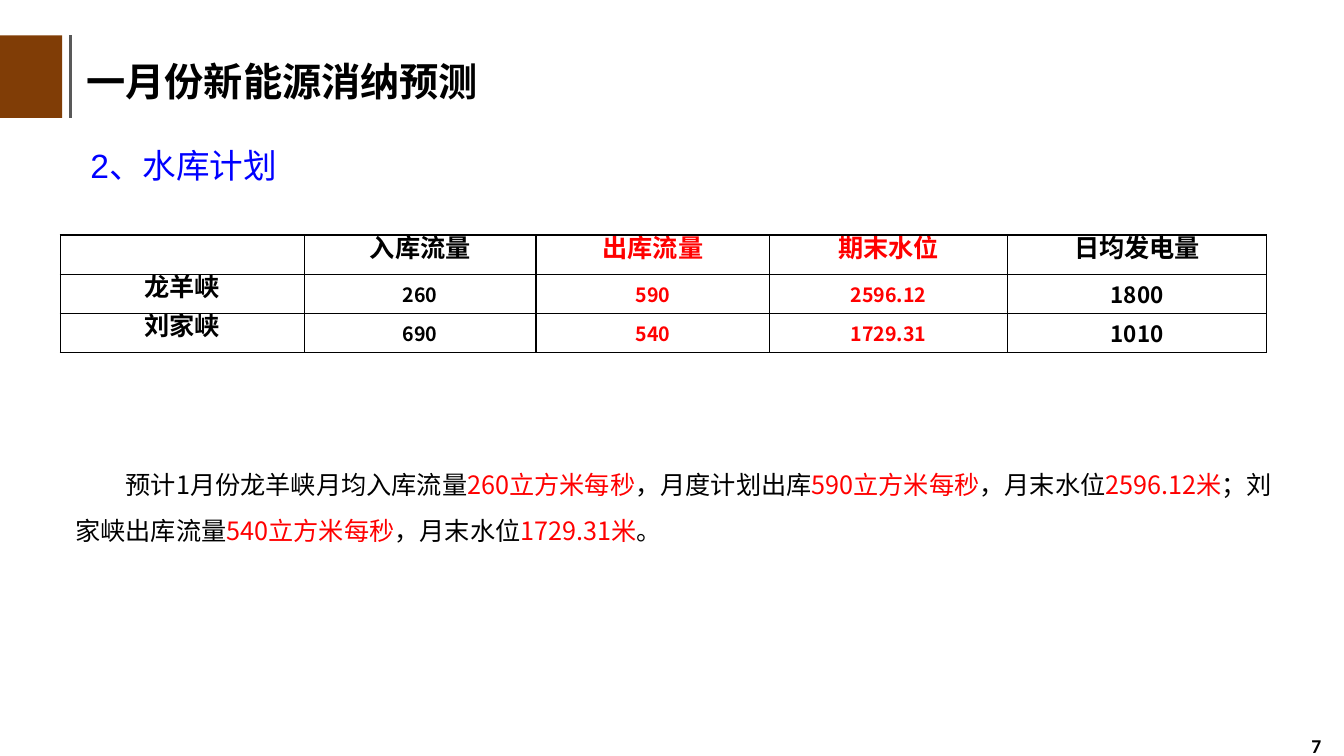
from typing import NamedTuple

import lxml.etree
import pptx
import pptx.dml.color
import pptx.enum.shapes
import pptx.enum.text
import pptx.oxml.ns
import pptx.util

Cm = pptx.util.Cm
Pt = pptx.util.Pt
Align = pptx.enum.text.PP_ALIGN
Anchor = pptx.enum.text.MSO_ANCHOR
qn = pptx.oxml.ns.qn

HAN_FONT = "Noto Sans CJK SC"
BLACK, RED, BLUE = "000000", "FF0000", "0000FF"
BROWN, GREY = "803D06", "595959"


class Style(NamedTuple):
    size: float
    bold: bool = False
    font: str = HAN_FONT


class Span(NamedTuple):
    text: str
    color: str = BLACK


class TextBlock(NamedTuple):
    left: float
    top: float
    width: float
    height: float
    spans: list[Span]
    style: Style
    paragraph: dict = {}
    anchor: Anchor = Anchor.TOP
    indent: float = 0


class CellLook(NamedTuple):
    style: Style
    line_spacing: pptx.util.Length | None
    side_margin: float
    end_margin: float


def rgb(color: str) -> pptx.dml.color.RGBColor:
    return pptx.dml.color.RGBColor.from_string(color)


def apply(target, values: dict) -> None:
    for name, value in values.items():
        setattr(target, name, value)


def add_span(paragraph, span: Span, style: Style) -> None:
    run = paragraph.add_run()
    run.text = span.text
    apply(run.font, {"size": Pt(style.size), "bold": style.bold, "name": style.font})
    run.font.color.rgb = rgb(span.color)
    east_asian = lxml.etree.Element(qn("a:ea"), typeface=HAN_FONT)
    run.font._element.find(qn("a:latin")).addnext(east_asian)


def add_text(slide, block: TextBlock) -> None:
    box = slide.shapes.add_textbox(*map(Cm, block[:4]))
    apply(box.text_frame, {"word_wrap": True, "vertical_anchor": block.anchor})
    paragraph = box.text_frame.paragraphs[0]
    apply(paragraph, block.paragraph)
    if block.indent:
        paragraph._p.get_or_add_pPr().set("indent", str(Cm(block.indent)))
    for span in block.spans:
        add_span(paragraph, span, block.style)


def add_borders(cell) -> None:
    properties = cell._tc.get_or_add_tcPr()
    for side in ("lnL", "lnR", "lnT", "lnB"):
        border = lxml.etree.SubElement(properties, qn(f"a:{side}"), w=str(Pt(1)))
        fill = lxml.etree.SubElement(border, qn("a:solidFill"))
        lxml.etree.SubElement(fill, qn("a:srgbClr"), val=BLACK)


def fill_cell(cell, span: Span, look: CellLook) -> None:
    add_borders(cell)
    cell.fill.background()
    side, end = Cm(look.side_margin), Cm(look.end_margin)
    apply(cell, {"vertical_anchor": Anchor.MIDDLE, "margin_left": side,
                 "margin_right": side, "margin_top": end, "margin_bottom": end})
    paragraph = cell.text_frame.paragraphs[0]
    apply(paragraph, {"alignment": Align.CENTER, "line_spacing": look.line_spacing})
    if span.text:
        add_span(paragraph, span, look.style)


# Reservoir table
LABEL = CellLook(Style(18, True), Pt(14), 0.13, 0)
VALUE = CellLook(Style(14, True), Pt(20), 0.08, 0.08)
OUTPUT = CellLook(Style(16, True), None, 0.08, 0.08)

RESERVOIR_ROWS = [
    ["", "入库流量", "出库流量", "期末水位", "日均发电量"],
    ["龙羊峡", "260", "590", "2596.12", "1800"],
    ["刘家峡", "690", "540", "1729.31", "1010"],
]
COLUMN_WIDTHS = [6.15, 5.84, 5.89, 5.99, 6.53]
ROW_HEIGHT = 0.99
PLANNED_COLUMNS = (2, 3)


def add_reservoir_table(slide) -> None:
    rows, columns = len(RESERVOIR_ROWS), len(COLUMN_WIDTHS)
    reservoirs = slide.shapes.add_table(
        rows, columns, Cm(1.52), Cm(5.92),
        Cm(sum(COLUMN_WIDTHS)), Cm(rows * ROW_HEIGHT)).table
    apply(reservoirs, {"first_row": False, "horz_banding": False})
    for column, width in zip(reservoirs.columns, COLUMN_WIDTHS):
        column.width = Cm(width)
    for r, texts in enumerate(RESERVOIR_ROWS):
        reservoirs.rows[r].height = Cm(ROW_HEIGHT)
        for c, text in enumerate(texts):
            if r == 0 or c == 0:
                look = LABEL
            else:
                look = OUTPUT if c == columns - 1 else VALUE
            color = RED if c in PLANNED_COLUMNS else BLACK
            fill_cell(reservoirs.cell(r, c), Span(text, color), look)


# Text blocks
TEXT_BLOCKS = [
    TextBlock(1.93, 1.32, 22.38, 1.45, [Span("一月份新能源消纳预测")], Style(28, True)),
    TextBlock(1.65, 11.33, 31.22, 2.57, [
        Span("预计1月份龙羊峡月均入库流量"), Span("260立方米每秒", RED),
        Span("，月度计划出库"), Span("590立方米每秒", RED),
        Span("，月末水位"), Span("2596.12米", RED),
        Span("；刘家峡出库流量"), Span("540立方米每秒", RED),
        Span("，月末水位"), Span("1729.31米", RED), Span("。"),
    ], Style(18), {"line_spacing": 1.5}, indent=1.27),
    TextBlock(2.03, 3.53, 10.31, 1.3, [Span("2、水库计划", BLUE)],
              Style(24, font="Arial")),
    TextBlock(25.65, 18.29, 7.9, 1.02, [Span("7")], Style(14, True, "Calibri"),
              {"alignment": Align.RIGHT}, Anchor.MIDDLE),
]


def add_title_mark(slide) -> None:
    top, height, rule_x = Cm(0.89), Cm(2.08), Cm(1.78)
    block = slide.shapes.add_shape(
        pptx.enum.shapes.MSO_SHAPE.RECTANGLE, 0, top, Cm(1.57), height)
    block.shadow.inherit = False
    block.fill.solid()
    block.fill.fore_color.rgb = rgb(BROWN)
    block.line.fill.background()
    rule = slide.shapes.add_connector(
        pptx.enum.shapes.MSO_CONNECTOR.STRAIGHT, rule_x, top, rule_x, top + height)
    rule.line.color.rgb = rgb(GREY)
    rule.line.width = Pt(2.25)
    lxml.etree.SubElement(rule._element.spPr, qn("a:effectLst"))


def main() -> None:
    deck = pptx.Presentation()
    apply(deck, {"slide_width": Cm(33.87), "slide_height": Cm(19.05)})
    slide = deck.slides.add_slide(deck.slide_layouts[6])
    add_title_mark(slide)
    for block in TEXT_BLOCKS:
        add_text(slide, block)
    add_reservoir_table(slide)
    deck.save("out.pptx")


if __name__ == "__main__":
    main()
